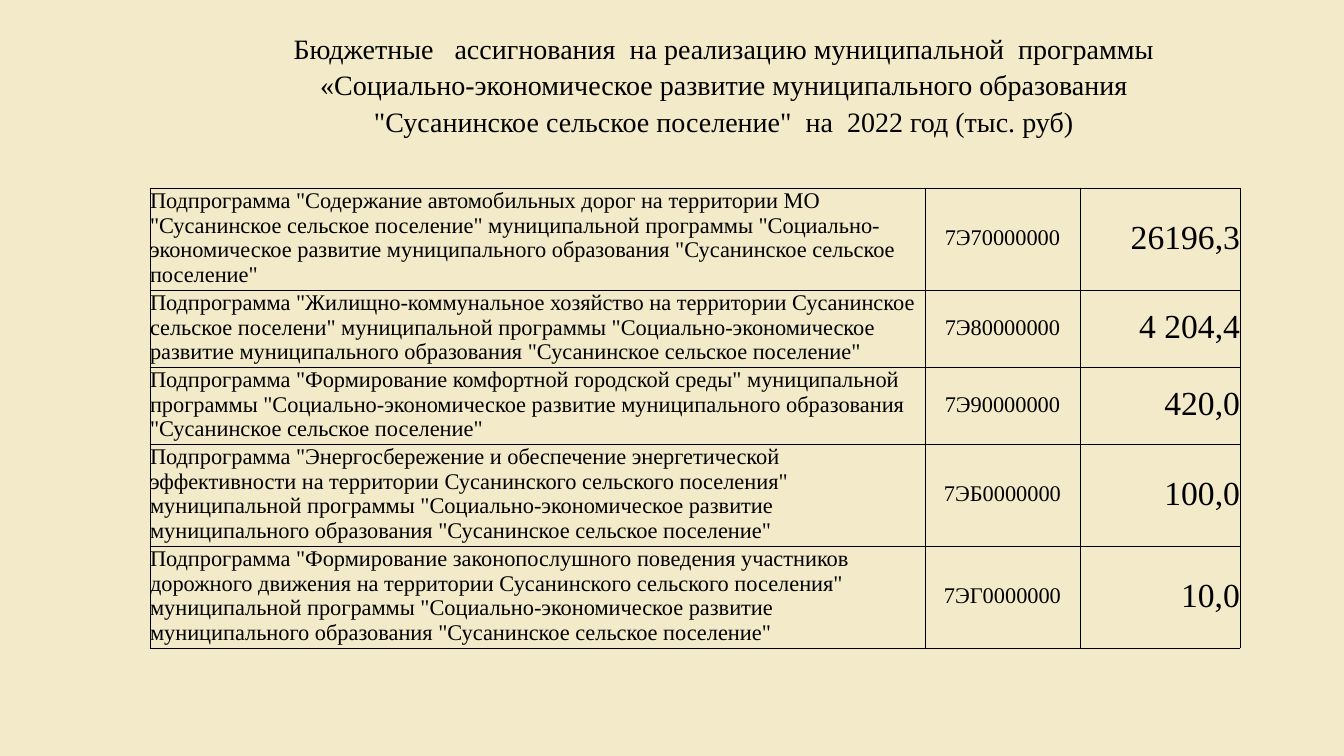
from pptx import Presentation
from pptx.dml.color import RGBColor
from pptx.enum.text import MSO_ANCHOR as Anchor, MSO_AUTO_SIZE as AutoSize, PP_ALIGN as Align
from pptx.oxml import parse_xml
from pptx.oxml.ns import nsdecls
from pptx.util import Emu, Pt

PX = 914400 / 100.8


def px(n):
    return Emu(round(n * PX))


def color(hex_string):
    return RGBColor.from_string(hex_string)


class Deck:
    FONT, INK, PAPER = "Times New Roman", "000000", "F2EAC8"

    def __init__(self, width, height):
        self.prs = Presentation()
        self.prs.slide_width, self.prs.slide_height = px(width), px(height)
        self.s = None

    def slide(self):
        self.s = self.prs.slides.add_slide(self.prs.slide_layouts[5])
        fill = self.s.background.fill
        fill.solid()
        fill.fore_color.rgb = color(self.PAPER)

    def set_text(self, tf, text, size, align):
        tf.text = text
        p = tf.paragraphs[0]
        p.alignment = align
        font = p.runs[0].font
        font.name, font.size = self.FONT, Pt(size)
        font.color.rgb = color(self.INK)
        return p

    def title(self, text, x, y, w, h, size):
        sp = self.s.shapes.title
        sp.left, sp.top, sp.width, sp.height = px(x), px(y), px(w), px(h)
        tf = sp.text_frame
        tf.word_wrap, tf.auto_size = True, AutoSize.NONE
        tf.vertical_anchor = Anchor.TOP
        self.set_text(tf, text, size, Align.CENTER).line_spacing = 1.08

    def border(self, cell):
        tcPr = cell._tc.get_or_add_tcPr()
        for i, side in enumerate(("lnL", "lnR", "lnT", "lnB")):
            tcPr.insert(i, parse_xml(
                f'<a:{side} {nsdecls("a")} w="{Pt(0.5)}"><a:solidFill>'
                f'<a:srgbClr val="{self.INK}"/></a:solidFill></a:{side}>'))

    def table(self, rows, x, y, widths, heights, styles):
        table = self.s.shapes.add_table(
            len(rows), len(widths), px(x), px(y), px(sum(widths)), px(sum(heights))).table
        table.first_row = table.horz_banding = False
        for column, width in zip(table.columns, widths):
            column.width = px(width)
        for row, height, values in zip(table.rows, heights, rows):
            row.height = px(height)
            for cell, value, (size, align) in zip(row.cells, values, styles):
                cell.margin_left = cell.margin_right = cell.margin_top = 0
                cell.margin_bottom = px(2)
                cell.vertical_anchor = Anchor.MIDDLE
                cell.fill.background()
                self.border(cell)
                self.set_text(cell.text_frame, value, size, align)


# Wording: subprogramme, budget code, amount, lines of text
PROGRAMME = ('муниципальной программы "Социально-экономическое развитие '
             'муниципального образования "Сусанинское сельское поселение"')
SUBPROGRAMMES = [
    ('Содержание автомобильных дорог на территории МО "Сусанинское сельское поселение',
     "7Э70000000", "26196,3", 4),
    ("Жилищно-коммунальное хозяйство на территории Сусанинское сельское поселени",
     "7Э80000000", "4 204,4", 3),
    ("Формирование комфортной городской среды", "7Э90000000", "420,0", 3),
    ("Энергосбережение и обеспечение энергетической эффективности "
     "на территории Сусанинского сельского поселения", "7ЭБ0000000", "100,0", 4),
    ("Формирование законопослушного поведения участников дорожного движения "
     "на территории Сусанинского сельского поселения", "7ЭГ0000000", "10,0", 4),
]


def main():
    deck = Deck(1344, 756)
    deck.slide()

    # Heading
    deck.title('Бюджетные   ассигнования  на реализацию муниципальной  программы '
               '«Социально-экономическое развитие муниципального образования '
               '"Сусанинское сельское поселение"  на  2022 год (тыс. руб)',
               249, 24, 950, 112, 20)

    # Budget table: each row is as tall as its lines of text
    rows = [(f'Подпрограмма "{name}" {PROGRAMME}', code, amount)
            for name, code, amount, _ in SUBPROGRAMMES]
    heights = [25 * lines + 2 for *_, lines in SUBPROGRAMMES]
    deck.table(rows, 150, 188, [775, 155, 160], heights,
               [(16, Align.LEFT), (16, Align.CENTER), (24, Align.RIGHT)])

    deck.prs.save("out.pptx")


if __name__ == "__main__":
    main()
